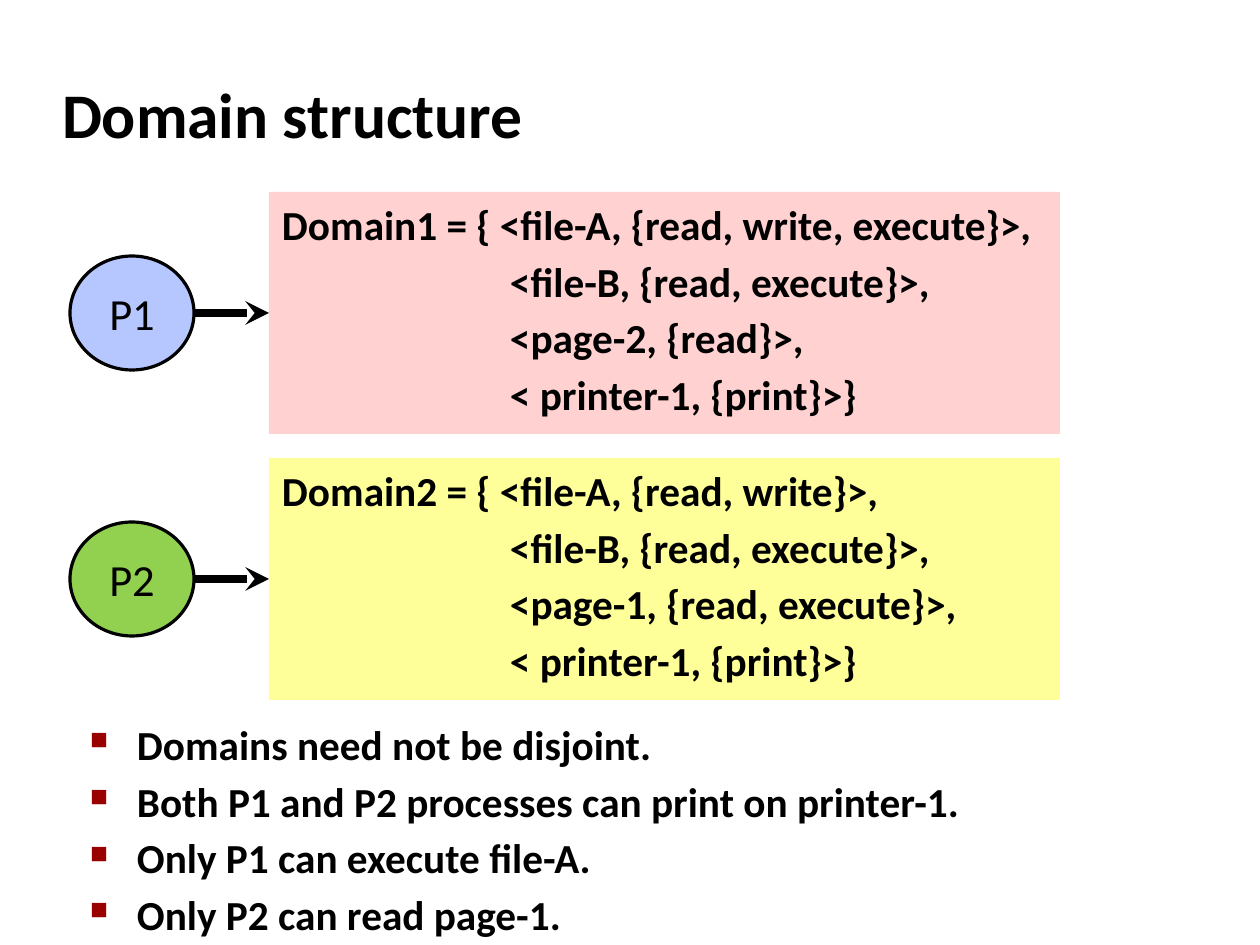
from lxml import etree
from pptx import Presentation
from pptx import util as u
from pptx.dml.color import RGBColor
from pptx.enum import shapes, text
from pptx.oxml.ns import qn

PX = 8000  # EMU per px
THEME = {
    "font": "Calibri", "ink": "000000", "bullet": "990000",
    "title": 40, "body": 26, "process": 28, "space_before": 4.6,
}


def box(left, top, width, height):
    return [n * PX for n in (left, top, width, height)]


def write(sp, lines, size, bold=True, anchor=text.MSO_ANCHOR.TOP,
          align=text.PP_ALIGN.LEFT, space=0):
    """Fill the shape's text frame, one paragraph per line, in theme type."""
    tf = sp.text_frame
    tf.text = "\n".join(lines)
    tf.word_wrap = True
    tf.auto_size = text.MSO_AUTO_SIZE.NONE
    tf.vertical_anchor = anchor
    tf.margin_left = tf.margin_right = 13 * PX
    tf.margin_top = tf.margin_bottom = 7 * PX
    for p in tf.paragraphs:
        p.alignment = align
        p.space_before = u.Pt(space)
        font = p.runs[0].font
        font.name, font.size, font.bold = THEME["font"], u.Pt(size), bold
        font.color.rgb = RGBColor.from_string(THEME["ink"])
    return tf.paragraphs


prs = Presentation()
prs.slide_width, prs.slide_height = 1260 * PX, 945 * PX
slide = prs.slides.add_slide(prs.slide_layouts[5])

title = slide.shapes.title
title.left, title.top, title.width, title.height = box(49, 61, 1046, 105)
write(title, ["Domain structure"], THEME["title"], anchor=text.MSO_ANCHOR.MIDDLE)

# Processes and the domains they run in
BOX_H, CIRCLE_W, CIRCLE_H = 242, 124, 114
domains = [
    ("P1", "B6C7FF", 192, "FF0000", 18,
     ["Domain1 = { <file-A, {read, write, execute}>,", "<file-B, {read, execute}>,",
      "<page-2, {read}>,", "< printer-1, {print}>}"]),
    ("P2", "92D050", 458, "FFFF00", 40,
     ["Domain2 = { <file-A, {read, write}>,", "<file-B, {read, execute}>,",
      "<page-1, {read, execute}>,", "< printer-1, {print}>}"]),
]
for process, circle_fill, top, domain_fill, opacity, rights in domains:
    middle = top + BOX_H // 2

    domain = slide.shapes.add_shape(
        shapes.MSO_SHAPE.RECTANGLE, *box(269, top, 791, BOX_H))
    domain.shadow.inherit = False
    domain.line.fill.background()
    domain.fill.solid()
    domain.fill.fore_color.rgb = RGBColor.from_string(domain_fill)
    color = domain.fill._xPr.find(qn("a:solidFill"))[0]
    etree.SubElement(color, qn("a:alpha"), val=str(opacity * 1000))
    paragraphs = write(domain, rights, THEME["body"], space=THEME["space_before"])
    for p in paragraphs[1:]:
        p._p.get_or_add_pPr().set("marL", str(228 * PX))

    circle = slide.shapes.add_shape(
        shapes.MSO_SHAPE.OVAL, *box(70, middle - CIRCLE_H // 2, CIRCLE_W, CIRCLE_H))
    circle.shadow.inherit = False
    circle.fill.solid()
    circle.fill.fore_color.rgb = RGBColor.from_string(circle_fill)
    circle.line.color.rgb = RGBColor.from_string(THEME["ink"])
    circle.line.width = u.Pt(2)
    write(circle, [process], THEME["process"], bold=False,
          anchor=text.MSO_ANCHOR.MIDDLE, align=text.PP_ALIGN.CENTER)

    arrow = slide.shapes.add_connector(
        shapes.MSO_CONNECTOR.STRAIGHT, *box(70 + CIRCLE_W, middle, 269, middle))
    arrow.end_connect(domain, 1)
    arrow.line.color.rgb = RGBColor.from_string(THEME["ink"])
    arrow.line.width = u.Pt(5)
    etree.SubElement(arrow.line._get_or_add_ln(), qn("a:tailEnd"), type="stealth")
    etree.SubElement(arrow._element.spPr, qn("a:effectLst"))

# Remarks
remarks = slide.shapes.add_textbox(*box(77, 712, 1126, 233))
for p in write(remarks, [
    "Domains need not be disjoint.",
    "Both P1 and P2 processes can print on printer-1.",
    "Only P1 can execute file-A.",
    "Only P2 can read page-1.",
], THEME["body"], space=THEME["space_before"]):
    pPr = p._p.get_or_add_pPr()
    pPr.set("marL", str(47 * PX))
    pPr.set("indent", str(-47 * PX))
    bullet_color = etree.SubElement(pPr, qn("a:buClr"))
    etree.SubElement(bullet_color, qn("a:srgbClr"), val=THEME["bullet"])
    etree.SubElement(pPr, qn("a:buSzPct"), val="60000")
    etree.SubElement(pPr, qn("a:buChar"), char="■")

prs.save("out.pptx")
